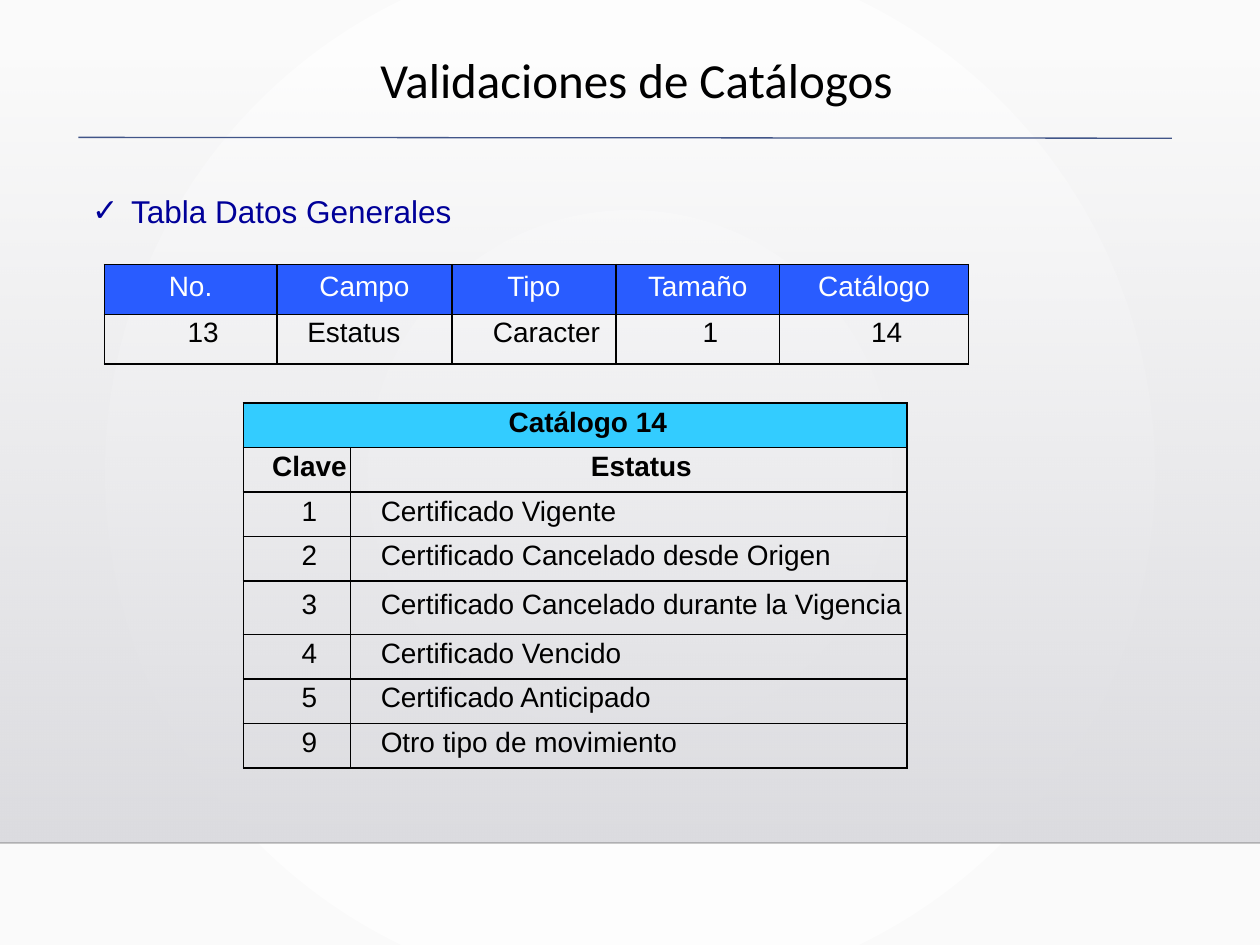
import pptx
import pptx.dml.color
import pptx.enum.shapes
import pptx.enum.text
import pptx.oxml
import pptx.oxml.ns
import pptx.util
from dataclasses import dataclass
from lxml import etree

Pt = pptx.util.Pt
RGB = pptx.dml.color.RGBColor.from_string
ALIGN = pptx.enum.text.PP_ALIGN
ANCHOR = pptx.enum.text.MSO_ANCHOR
STRAIGHT = pptx.enum.shapes.MSO_CONNECTOR.STRAIGHT
qn = pptx.oxml.ns.qn


@dataclass(frozen=True)
class Theme:
    title_font: str = "Calibri"
    font: str = "Arial"
    title_size: int = 28
    list_size: int = 18
    table_size: int = 16
    black: str = "000000"
    white: str = "FFFFFF"
    backdrop: str = "FAFAFA"
    panel_top: str = "DCDCE0"
    panel_bottom: str = "DEDEE2"
    rule: str = "415588"
    list_color: str = "000099"
    header: str = "295CFF"
    catalog: str = "33CCFF"


T = Theme()


def write(tf, text, size=T.table_size, font=T.font, color=T.black, bold=False,
          align=ALIGN.CENTER, margin=0, indent=0, spacing=None, after=0, bullet=None):
    p = tf.paragraphs[0]
    pPr = p._p.get_or_add_pPr()
    pPr.set("marL", str(Pt(margin)))
    pPr.set("indent", str(Pt(indent)))
    if bullet:
        etree.SubElement(pPr, qn("a:buFont"), typeface=font)
        etree.SubElement(pPr, qn("a:buChar"), char=bullet)
    p.alignment = align
    p.space_before, p.space_after = Pt(0), Pt(after)
    if spacing:
        p.line_spacing = Pt(spacing)
    r = p.add_run()
    r.text = text
    r.font.size, r.font.name, r.font.bold = Pt(size), font, bold
    r.font.color.rgb = RGB(color)


def new_table(slide, left, top, widths, heights):
    """Add an unstyled table with thin black borders and clear cells."""
    table = slide.shapes.add_table(len(heights), len(widths), Pt(left), Pt(top),
                                   Pt(sum(widths)), Pt(sum(heights))).table
    table.first_row = table.horz_banding = False
    for column, width in zip(table.columns, widths):
        column.width = Pt(width)
    for row, height in zip(table.rows, heights):
        row.height = Pt(height)
    for cell in table.iter_cells():
        tcPr = cell._tc.get_or_add_tcPr()
        for side in ("lnL", "lnR", "lnT", "lnB"):
            ln = etree.SubElement(tcPr, qn(f"a:{side}"), w=str(Pt(1)))
            fill = etree.SubElement(ln, qn("a:solidFill"))
            etree.SubElement(fill, qn("a:srgbClr"), val=T.black)
        cell.fill.background()
    return table


prs = pptx.Presentation()
prs.slide_width, prs.slide_height = Pt(720), Pt(540)
slide = prs.slides.add_slide(prs.slide_layouts[1])

# Background: radial gradient
fill = slide.background.fill
fill.gradient()
for stop, color in zip(fill.gradient_stops, (T.white, T.backdrop)):
    stop.color.rgb = RGB(color)
grad = slide._element.find(".//" + qn("a:gradFill"))
grad.remove(grad.find(qn("a:lin")))
radial = etree.SubElement(grad, qn("a:path"), path="circle")
etree.SubElement(radial, qn("a:fillToRect"), l="50000", t="50000", r="50000", b="50000")

# Panel that fades in downwards, behind everything else
panel = slide.shapes.add_shape(pptx.enum.shapes.MSO_SHAPE.RECTANGLE,
                               Pt(0), Pt(36.7), Pt(720), Pt(445))
panel.shadow.inherit = False
panel.line.fill.background()
panel.fill.gradient()
panel.fill.gradient_angle = 270
for stop, color in zip(panel.fill.gradient_stops, (T.panel_top, T.panel_bottom)):
    stop.color.rgb = RGB(color)
etree.SubElement(panel._element.find(".//" + qn("a:srgbClr")), qn("a:alpha"), val="0")
slide.shapes._spTree.insert(2, panel._element)

# Panel edge and title rule
for x1, y1, x2, y2, color, width, alpha in (
        (0, 481.7, 720, 481.7, T.black, 1, 20),
        (44.8, 78.5, 669.6, 79, T.rule, 0.75, 100)):
    line = slide.shapes.add_connector(STRAIGHT, Pt(x1), Pt(y1), Pt(x2), Pt(y2))
    line.line.color.rgb = RGB(color)
    line.line.width = Pt(width)
    etree.SubElement(line._element.find(".//" + qn("a:srgbClr")),
                     qn("a:alpha"), val=str(alpha * 1000))
    etree.SubElement(line._element.spPr, qn("a:effectLst"))

# Title and list
title, body = slide.placeholders
for sp, box in ((title, (99.4, 24.5, 528.5, 41)), (body, (45.4, 104.4, 624.2, 31.7))):
    sp.left, sp.top, sp.width, sp.height = map(Pt, box)
    sp.text_frame.word_wrap = True
    sp.text_frame.auto_size = pptx.enum.text.MSO_AUTO_SIZE.SHAPE_TO_FIT_TEXT
    sp.text_frame.vertical_anchor = ANCHOR.MIDDLE
write(title.text_frame, "Validaciones de Catálogos", size=T.title_size, font=T.title_font)
write(body.text_frame, "Tabla Datos Generales", size=T.list_size, color=T.list_color,
      align=ALIGN.JUSTIFY, margin=22.3, indent=-22.3, bullet="✓")

# Field description
fields = (("No.", "13"), ("Campo", "Estatus"), ("Tipo", "Caracter"),
          ("Tamaño", "1"), ("Catálogo", "14"))
table = new_table(slide, 59.6, 151.2, (98.6, 100.1, 93.6, 93.6, 108), (28.4, 28.4))
for col, (name, value) in enumerate(fields):
    cell = table.cell(0, col)
    cell.fill.solid()
    cell.fill.fore_color.rgb = RGB(T.header)
    write(cell.text_frame, name, color=T.white)
    cell = table.cell(1, col)
    cell.vertical_anchor = ANCHOR.MIDDLE
    cell.margin_left = cell.margin_right = Pt(3)
    cell.margin_top = cell.margin_bottom = Pt(0)
    write(cell.text_frame, value, indent=14.4, spacing=10.8,
          align=ALIGN.JUSTIFY if name == "Campo" else ALIGN.CENTER)

# Catalogue of status codes
catalog = (
    ("Catálogo 14",),
    ("Clave", "Estatus"),
    ("1", "Certificado Vigente"),
    ("2", "Certificado Cancelado desde Origen"),
    ("3", "Certificado Cancelado durante la Vigencia"),
    ("4", "Certificado Vencido"),
    ("5", "Certificado Anticipado"),
    ("9", "Otro tipo de movimiento"),
)
heights = [30.6 if row[0] == "3" else 25.4 for row in catalog]
table = new_table(slide, 139, 230.4, (61.2, 318.2), heights)
heading = table.cell(0, 0)
heading.merge(table.cell(0, 1))
heading.fill.solid()
heading.fill.fore_color.rgb = RGB(T.catalog)
for i, row in enumerate(catalog):
    for j, text in enumerate(row):
        cell = table.cell(i, j)
        cell.vertical_anchor = ANCHOR.MIDDLE
        cell.margin_left = cell.margin_right = cell.margin_top = cell.margin_bottom = Pt(0)
        is_name = i > 1 and j == 1
        write(cell.text_frame, text, bold=i < 2, indent=14.4, spacing=14.5, after=1,
              align=ALIGN.LEFT if is_name else ALIGN.CENTER, margin=3 if is_name else 0)

prs.save("out.pptx")
